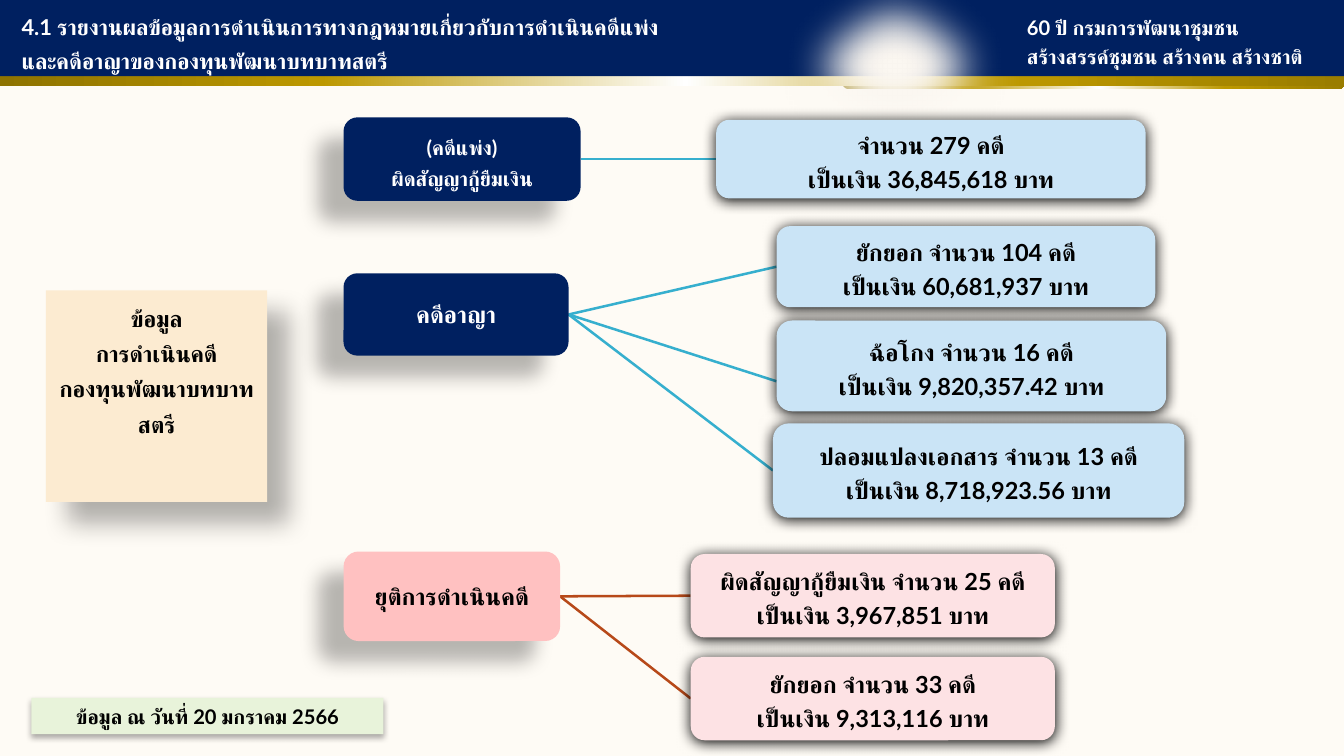
from dataclasses import dataclass

from lxml import etree
from pptx import Presentation, util as u
from pptx.dml.color import RGBColor
from pptx.enum import shapes, text
from pptx.oxml.ns import qn

COLUMNS, ROWS = 111.1, 62.5
CELL = u.Inches(0.1)
FONT = "Lato"
NAVY, WHITE, BLACK = "002060", "FFFFFF", "000000"
PALE_BLUE, PALE_PINK, PINK = "CAE4F6", "FDE2E4", "FFC1C1"
CREAM, SAND, GREEN = "FEFBF5", "FCEBD1", "E8F3DA"
BLUE_LINE, RUST_LINE = "36AFCE", "B74919"
GOLD = [(0, "8E7300"), (24, "BC9800"), (51, WHITE), (76, "BC9800"), (100, "9A7D00")]
# Shadow: opacity in percent, blur and distance in points, angle in degrees
FAR_SHADOW = (28, 11.8, 19.7, 141)
NOTE_SHADOW = (30, 15, 18, 45)
GLOW_SHADOW = (100, 8.5, 1, 90)
LABEL_SHADOW = (32, 3.5, 2.2, 90)

KIND = shapes.MSO_SHAPE
ALIGN = text.PP_ALIGN
ANCHOR = text.MSO_ANCHOR


@dataclass
class Box:
    """A rectangle measured in grid cells."""
    left: float
    top: float
    width: float
    height: float

    def inner(self, left, top, width, height):
        return Box(self.left + left, self.top + top, width, height)

    def emu(self):
        return [round(n * CELL) for n in (self.left, self.top, self.width, self.height)]


def colour(value):
    return RGBColor.from_string(value)


def add_xml(parent, tag, **attributes):
    child = etree.SubElement(parent, qn(tag))
    for name, value in attributes.items():
        child.set(name, str(value))
    return child


def add_effect(shape, tag, **attributes):
    effects = shape._element.spPr.find(qn("a:effectLst"))
    return add_xml(effects, tag, **attributes)


def add_shadow(shape, opacity, blur, distance, angle):
    shadow = add_effect(shape, "a:outerShdw", blurRad=u.Pt(blur), dist=u.Pt(distance),
                        dir=angle * 60000, algn="ctr", rotWithShape=0)
    add_xml(add_xml(shadow, "a:srgbClr", val=BLACK), "a:alpha", val=opacity * 1000)


def add_gradient(shape, stops):
    shape.fill.gradient()
    shape.fill.gradient_angle = 0
    stop_list = shape._element.spPr.find(qn("a:gradFill")).find(qn("a:gsLst"))
    for stop in list(stop_list):
        stop_list.remove(stop)
    for position, value in stops:
        add_xml(add_xml(stop_list, "a:gs", pos=position * 1000), "a:srgbClr", val=value)


def add_block(slide, box, kind, fill=None, gradient=None, shadow=None):
    shape = slide.shapes.add_shape(kind, *box.emu())
    shape.line.fill.background()
    shape.shadow.inherit = False
    if gradient:
        add_gradient(shape, gradient)
    elif fill:
        shape.fill.solid()
        shape.fill.fore_color.rgb = colour(fill)
    else:
        shape.fill.background()
    if shadow:
        add_shadow(shape, *shadow)
    return shape


def write(shape, lines, size=14, ink=BLACK, align=ALIGN.CENTER, anchor=ANCHOR.MIDDLE,
          spacing=1.0, inset=0.05):
    """Write one paragraph per line."""
    frame = shape.text_frame
    frame.word_wrap = True
    frame.vertical_anchor = anchor
    frame.margin_top = frame.margin_bottom = u.Inches(inset)
    for index, line in enumerate(lines.split("\n")):
        paragraph = frame.add_paragraph() if index else frame.paragraphs[0]
        paragraph.alignment = align
        paragraph.line_spacing = spacing
        run = paragraph.add_run()
        run.text = line
        run.font.size, run.font.bold, run.font.name = u.Pt(size), True, FONT
        run.font.color.rgb = colour(ink)
        add_xml(run._r.get_or_add_rPr(), "a:cs", typeface=FONT)


def add_line(slide, start, end, ink):
    points = [round(n * CELL) for n in (*start, *end)]
    line = slide.shapes.add_connector(shapes.MSO_CONNECTOR.STRAIGHT, *points)
    line.line.color.rgb = colour(ink)
    line.line.width = u.Pt(1.5)
    add_xml(line._element.spPr, "a:effectLst")


def add_header(slide, box):
    add_block(slide, box.inner(69.5, 2.8, 41.8, 4.6), KIND.ROUNDED_RECTANGLE, gradient=GOLD)
    add_block(slide, box.inner(0, 0.8, box.width, 6.3), KIND.RECTANGLE, gradient=GOLD)
    add_block(slide, box.inner(0, 0, box.width, 6.3), KIND.RECTANGLE, NAVY)
    glow = add_block(slide, box.inner(63.6, -3, 20.8, 16.9), KIND.OVAL, "FBF7F1")
    add_effect(glow, "a:softEdge", rad=u.Pt(25))
    title = add_block(slide, box.inner(0.4, -0.4, 65.3, 8.2), KIND.ROUNDED_RECTANGLE)
    write(title, "4.1 รายงานผลข้อมูลการดำเนินการทางกฎหมายเกี่ยวกับการดำเนินคดีแพ่ง\n"
                 "และคดีอาญาของกองทุนพัฒนาบทบาทสตรี",
          size=13, ink=WHITE, align=ALIGN.LEFT, anchor=ANCHOR.TOP, spacing=1.3)
    motto = slide.shapes.add_textbox(*box.inner(83.9, 0.4, 27.3, 5.8).emu())
    write(motto, "60 ปี กรมการพัฒนาชุมชน\nสร้างสรรค์ชุมชน สร้างคน สร้างชาติ",
          size=12, ink=WHITE, align=ALIGN.LEFT, anchor=ANCHOR.TOP, spacing=1.2)


def add_subject(slide, box):
    note = add_block(slide, box, KIND.RECTANGLE, SAND, shadow=NOTE_SHADOW)
    write(note, "ข้อมูล\nการดำเนินคดี\nกองทุนพัฒนาบทบาท\nสตรี", size=13.5,
          anchor=ANCHOR.TOP, spacing=1.3)


def add_date(slide, box):
    label = add_block(slide, box, KIND.RECTANGLE, GREEN, shadow=LABEL_SHADOW)
    write(label, "ข้อมูล ณ วันที่ 20 มกราคม 2566", size=12)


def add_branch(slide, box, topic, cases, line_ink, case_fill, fill=NAVY, ink=WHITE,
               size=14, spacing=1.0):
    """Draw a topic filling the box, and lines to its cases.

    A case is its place from the box, the share of its height where the line
    arrives, and its text.
    """
    start = (box.left + box.width, box.top + box.height / 2)
    placed = [(box.inner(*place), entry, words) for place, entry, words in cases]
    for case, entry, _ in placed:
        add_line(slide, start, (case.left, case.top + case.height * entry), line_ink)
    shape = add_block(slide, box, KIND.ROUNDED_RECTANGLE, fill, shadow=FAR_SHADOW)
    write(shape, topic, size=size, ink=ink, spacing=spacing, inset=0.03)
    for case, _, words in placed:
        shape = add_block(slide, case, KIND.ROUNDED_RECTANGLE, case_fill, shadow=GLOW_SHADOW)
        write(shape, words, spacing=1.2, inset=0.03)


def main():
    presentation = Presentation()
    presentation.slide_width = round(COLUMNS * CELL)
    presentation.slide_height = round(ROWS * CELL)
    slide = presentation.slides.add_slide(presentation.slide_layouts[6])
    slide.background.fill.solid()
    slide.background.fill.fore_color.rgb = colour(CREAM)

    add_header(slide, Box(0, 0, COLUMNS, 7.4))
    add_subject(slide, Box(3.8, 24, 18.3, 17.5))
    add_branch(slide, Box(28.4, 9.7, 19.6, 6.9), "(คดีแพ่ง)\nผิดสัญญากู้ยืมเงิน", [
        ((30.8, 0.2, 35.5, 6.5), 0.5, "จำนวน 279 คดี\nเป็นเงิน 36,845,618 บาท"),
    ], BLUE_LINE, PALE_BLUE, size=12, spacing=1.3)
    add_branch(slide, Box(28.4, 22.6, 18.6, 6.8), "คดีอาญา", [
        ((35.8, -3.9, 31.3, 6.7), 0.5, "ยักยอก จำนวน 104 คดี\nเป็นเงิน 60,681,937 บาท"),
        ((35.8, 3.9, 32.2, 7.5), 0.67, "ฉ้อโกง จำนวน 16 คดี\nเป็นเงิน 9,820,357.42 บาท"),
        ((35.5, 12.4, 34, 7.8), 0.5,
         "ปลอมแปลงเอกสาร จำนวน 13 คดี\nเป็นเงิน 8,718,923.56 บาท"),
    ], BLUE_LINE, PALE_BLUE)
    add_branch(slide, Box(28.4, 45.6, 17.9, 7.4), "ยุติการดำเนินคดี", [
        ((28.7, 0.2, 30.1, 6.9), 0.5,
         "ผิดสัญญากู้ยืมเงิน จำนวน 25 คดี\nเป็นเงิน 3,967,851 บาท"),
        ((28.7, 8.7, 30.1, 6.9), 0.5, "ยักยอก จำนวน 33 คดี\nเป็นเงิน 9,313,116 บาท"),
    ], RUST_LINE, PALE_PINK, fill=PINK, ink=BLACK)
    add_date(slide, Box(2.6, 57.7, 29.1, 3))
    presentation.save("out.pptx")


if __name__ == "__main__":
    main()
